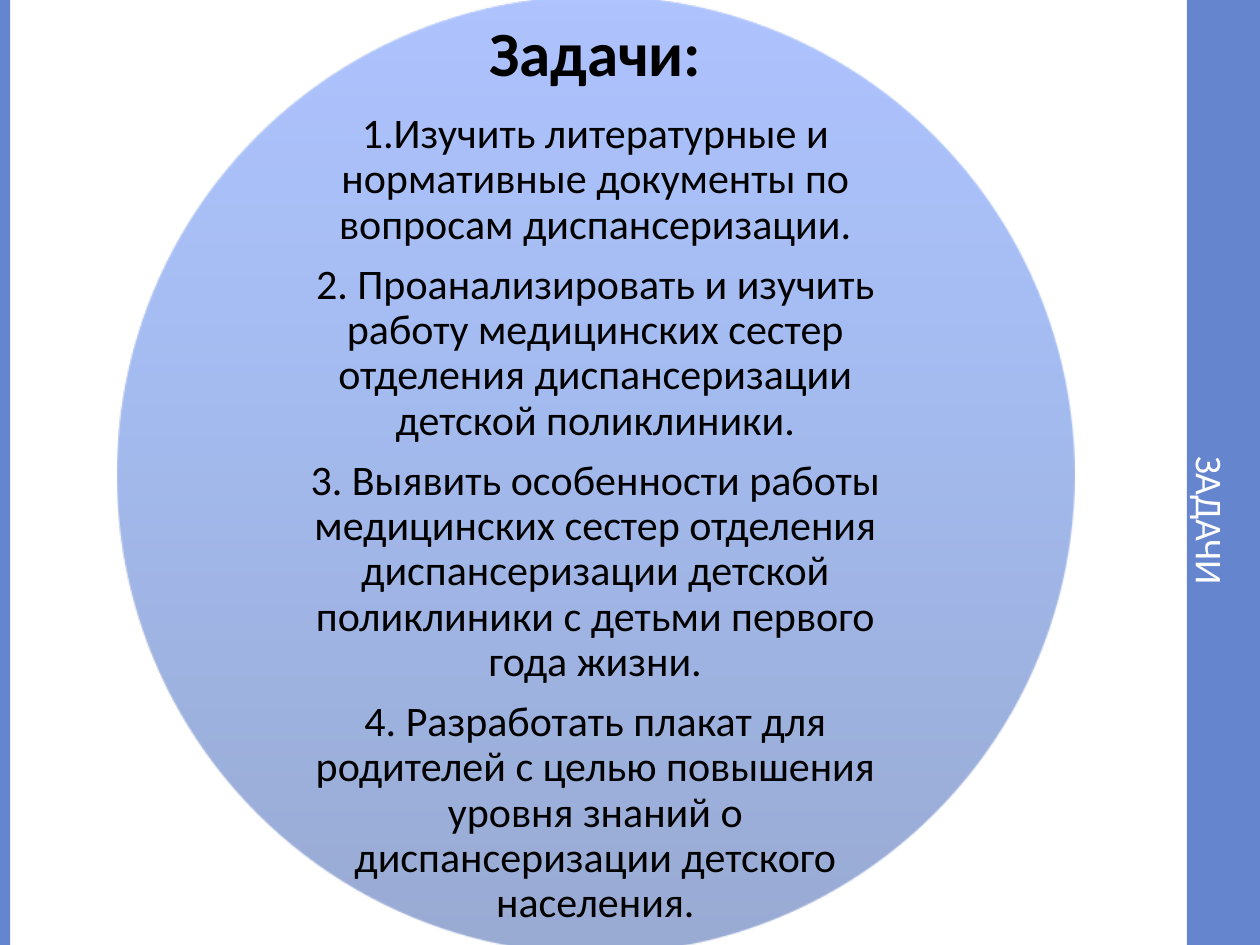
from pptx import Presentation
from pptx.dml.color import RGBColor
from pptx.enum.shapes import MSO_SHAPE as Shape
from pptx.enum.text import MSO_ANCHOR as Anchor, PP_ALIGN as Align
from pptx.oxml import parse_xml
from pptx.oxml.ns import nsdecls
from pptx.util import Inches, Pt

TASKS = [
    "1.Изучить литературные и нормативные документы по вопросам диспансеризации.",
    "2. Проанализировать и изучить работу медицинских сестер отделения "
    "диспансеризации детской поликлиники.",
    "3. Выявить особенности работы медицинских сестер отделения диспансеризации "
    "детской поликлиники с детьми первого года жизни.",
    "4. Разработать плакат для родителей с целью повышения уровня знаний о "
    "диспансеризации детского населения.",
]


def color(hex_string):
    return RGBColor.from_string(hex_string)


def write(paragraph, text, size=24, bold=False, fill="000000", font="Calibri",
          align=Align.CENTER, line_spacing=1.0, after=0):
    paragraph.alignment = align
    paragraph.line_spacing = line_spacing
    paragraph.space_before = Pt(0)
    paragraph.space_after = Pt(after)
    run = paragraph.add_run()
    run.text = text
    run.font.name, run.font.size, run.font.bold = font, Pt(size), bold
    run.font.color.rgb = color(fill)


class TaskSlide:
    accent = "6585CF"
    gradient = [(0, "3356A7"), (60, "4978E4"), (100, "5E89FF")]
    opacity = 50

    def __init__(self, presentation):
        self.slide = presentation.slides.add_slide(presentation.slide_layouts[5])
        self.shapes = self.slide.shapes

    def shape(self, kind, *box):
        shape = self.shapes.add_shape(kind, *map(Inches, box))
        shape.shadow.inherit = False
        shape.line.fill.background()
        return shape

    def bar(self, left, width):
        bar = self.shape(Shape.RECTANGLE, left, 0, width, 7.5)
        bar.fill.solid()
        bar.fill.fore_color.rgb = color(self.accent)

    def title(self, text, left, top, width, height):
        title = self.shapes.title
        # A quarter turn about the centre swaps width and height
        shift = (height - width) / 2
        title.left, title.top = Inches(left - shift), Inches(top + shift)
        title.width, title.height = Inches(height), Inches(width)
        title.rotation = 90
        frame = title.text_frame
        frame.vertical_anchor = Anchor.MIDDLE
        # Insets shift the turned text down and towards the inner edge
        frame.margin_right = frame.margin_bottom = 0
        frame.margin_left, frame.margin_top = Inches(1), Inches(0.2)
        write(frame.paragraphs[0], text, size=21.6, fill="FFFFFF")
        # Keep the title in front of the side bar
        self.shapes._spTree.append(title._element)

    def circle(self, left, top, size):
        circle = self.shape(Shape.OVAL, left, top, size, size)
        stops = "".join(
            f'<a:gs pos="{position * 1000}"><a:srgbClr val="{value}">'
            f'<a:alpha val="{self.opacity * 1000}"/></a:srgbClr></a:gs>'
            for position, value in self.gradient)
        fill = parse_xml(f'<a:gradFill {nsdecls("a")} rotWithShape="1"><a:gsLst>{stops}'
                         '</a:gsLst><a:lin ang="16200000" scaled="0"/></a:gradFill>')
        circle._element.spPr.prstGeom.addnext(fill)

    def task_list(self, heading, tasks, left, top, size):
        box = self.shapes.add_textbox(*map(Inches, (left, top, size, size)))
        frame = box.text_frame
        frame.word_wrap = True
        frame.vertical_anchor = Anchor.MIDDLE
        frame.margin_left = frame.margin_right = Inches(0.42)
        write(frame.paragraphs[0], heading, size=36, bold=True,
              line_spacing=0.9, after=12.6)
        for task in tasks:
            write(frame.add_paragraph(), task, line_spacing=0.9, after=8.4)


def main():
    presentation = Presentation()
    presentation.slide_width, presentation.slide_height = Inches(10), Inches(7.5)
    page = TaskSlide(presentation)

    # Side bars and vertical title
    page.bar(9.42, 0.58)
    page.bar(0, 0.08)
    page.title("ЗАДАЧИ", 9.42, 0.42, 0.58, 6.42)

    # Circle with the list of tasks
    page.circle(0.93, -0.03, 7.6)
    page.task_list("Задачи:", TASKS, 2.04, 1.08, 5.37)

    presentation.save("out.pptx")


if __name__ == "__main__":
    main()
